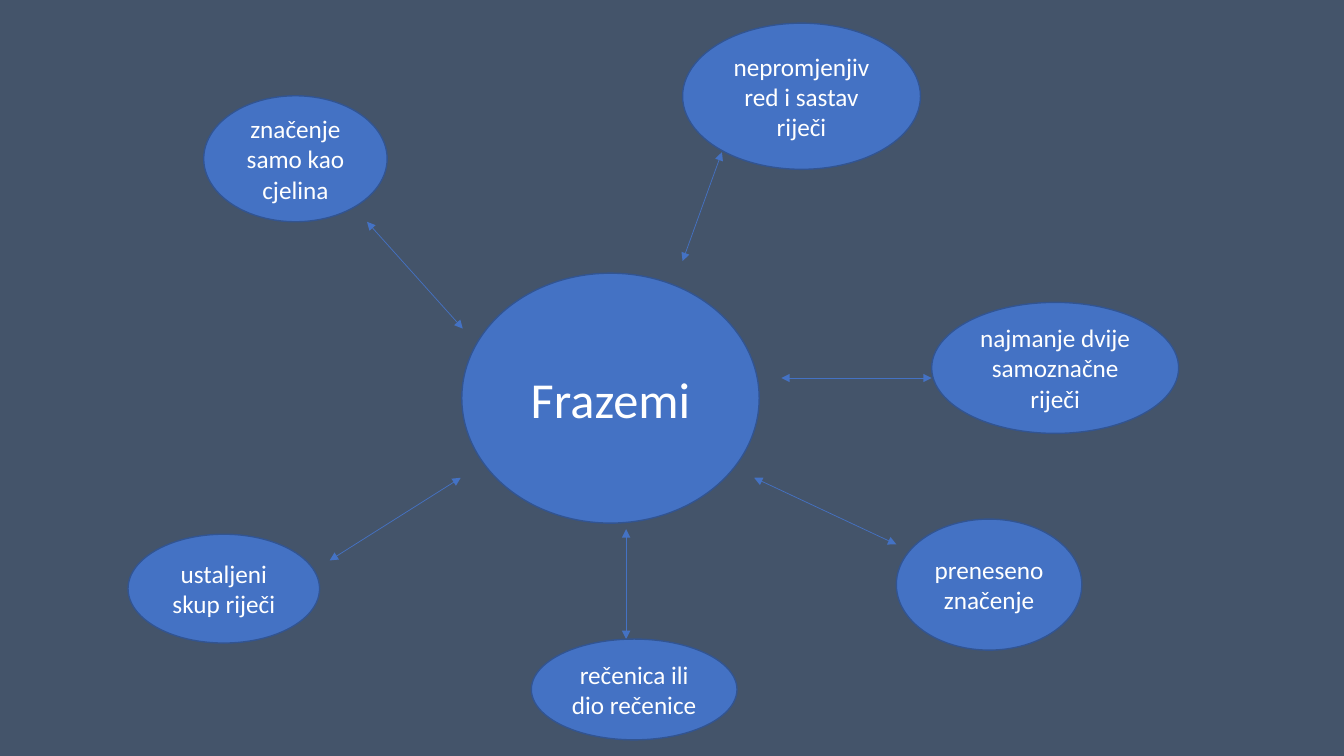
from dataclasses import dataclass

from pptx import Presentation
from pptx.dml.color import RGBColor as RGB
from pptx.enum.shapes import MSO_CONNECTOR as LINE, MSO_SHAPE as SHAPE
from pptx.enum.text import MSO_ANCHOR as ANCHOR, PP_ALIGN as ALIGN
from pptx.oxml.ns import qn
from pptx.util import Inches, Pt
from lxml.etree import SubElement


@dataclass(frozen=True)
class Theme:
    back: RGB = RGB.from_string("44546A")
    fill: RGB = RGB.from_string("4472C4")
    edge: RGB = RGB.from_string("325491")
    text: RGB = RGB.from_string("FFFFFF")
    font: str = "Calibri"
    large: int = 36
    small: int = 18
    border: float = 1
    thin: float = 0.5


class Map:
    def __init__(self, slide, theme):
        self.slide = slide
        self.theme = theme
        paint = slide.background.fill
        paint.solid()
        paint.fore_color.rgb = theme.back

    def bubble(self, text, box, size):
        look = self.theme
        oval = self.slide.shapes.add_shape(SHAPE.OVAL, *map(Inches, box))
        oval.shadow.inherit = False
        oval.fill.solid()
        oval.fill.fore_color.rgb = look.fill
        oval.line.color.rgb = look.edge
        oval.line.width = Pt(look.border)
        frame = oval.text_frame
        frame.word_wrap = True
        frame.vertical_anchor = ANCHOR.MIDDLE
        para = frame.paragraphs[0]
        para.alignment = ALIGN.CENTER
        run = para.add_run()
        run.text = text
        run.font.name = look.font
        run.font.size = Pt(size)
        run.font.color.rgb = look.text

    def arrow(self, start, end):
        """Draw a thin line with a triangle at both ends."""
        link = self.slide.shapes.add_connector(
            LINE.STRAIGHT, *map(Inches, start + end))
        link.line.color.rgb = self.theme.fill
        link.line.width = Pt(self.theme.thin)
        props = link.line._get_or_add_ln()
        for tip in ("a:headEnd", "a:tailEnd"):
            SubElement(props, qn(tip), type="triangle")
        SubElement(link._element.spPr, qn("a:effectLst"))


# Each trait: text, bubble box, arrow start by the hub, arrow end by the bubble
TRAITS = [
    ("nepromjenjiv red i sastav riječi", (6.77, 0.23, 2.36, 1.45),
     (6.77, 2.59), (7.16, 1.51)),
    ("najmanje dvije samoznačne riječi", (9.24, 3, 2.45, 1.3),
     (7.75, 3.75), (9.24, 3.75)),
    ("preneseno značenje", (8.89, 5.15, 1.84, 1.3),
     (7.48, 4.74), (8.89, 5.4)),
    ("rečenica ili dio rečenice", (5.27, 6.34, 2.04, 1),
     (6.21, 5.25), (6.21, 6.34)),
    ("značenje samo kao cjelina", (2.02, 0.95, 1.82, 1.25),
     (4.59, 3.26), (3.64, 2.2)),
    ("ustaljeni skup riječi", (1.27, 5.3, 1.9, 1.08),
     (4.57, 4.74), (3.27, 5.56)),
]


def main():
    deck = Presentation()
    deck.slide_width = Inches(13.33)
    deck.slide_height = Inches(7.5)
    blank = deck.slide_layouts[6]
    theme = Theme()
    board = Map(deck.slides.add_slide(blank), theme)
    board.bubble("Frazemi", (4.58, 2.71, 2.95, 2.48), theme.large)
    for text, box, start, end in TRAITS:
        board.arrow(start, end)
        board.bubble(text, box, theme.small)
    deck.save("out.pptx")


if __name__ == "__main__":
    main()
